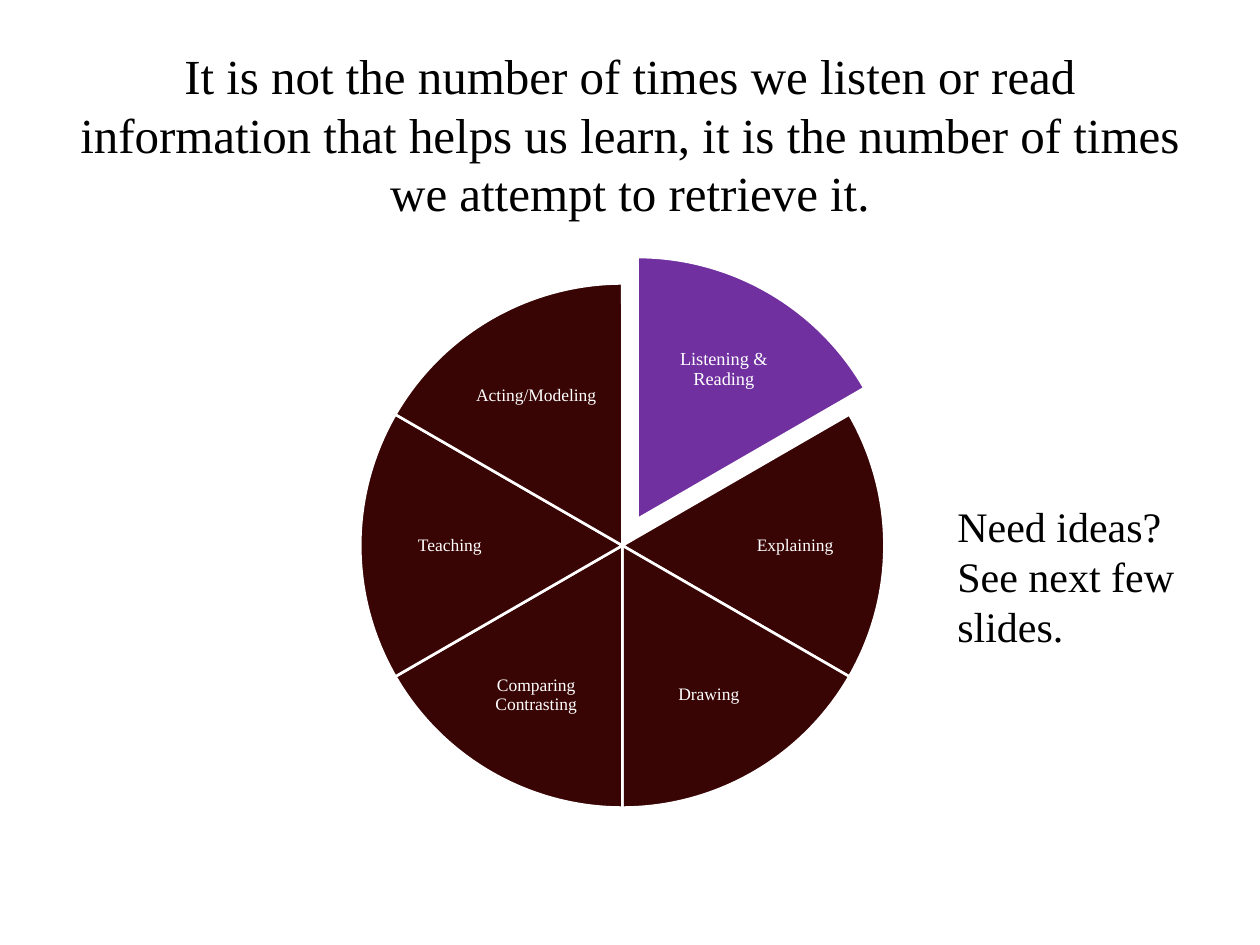
from math import cos, radians, sin

from pptx import Presentation
from pptx.dml.color import RGBColor
from pptx.enum.shapes import MSO_SHAPE
from pptx.enum.text import MSO_ANCHOR, PP_ALIGN
from pptx.util import Inches, Pt

PIE = MSO_SHAPE.PIE
MIDDLE = MSO_ANCHOR.MIDDLE
CENTER, LEFT = PP_ALIGN.CENTER, PP_ALIGN.LEFT

TITLE = ("It is not the number of times we listen or read information that "
         "helps us learn, it is the number of times we attempt to retrieve it.")
# Clockwise from the top; the first activity is pulled out of the pie
ACTIVITIES = ["Listening & Reading", "Explaining", "Drawing",
              "Comparing Contrasting", "Teaching", "Acting/Modeling"]
NOTE = ["Need ideas?", "See next few slides."]

THEME = {
    "font": "Times New Roman",
    "text": RGBColor(0x00, 0x00, 0x00),
    "light": RGBColor(0xFF, 0xFF, 0xFF),
    "wedge": RGBColor(0x38, 0x04, 0x04),
    "highlight": RGBColor(0x70, 0x30, 0xA0),
    "title_size": 28,
    "note_size": 24,
    "label_size": 10,
    "highlight_size": 10.5,
}

# Pie geometry, in inches
CENTER_X, CENTER_Y, RADIUS = 4.94, 4.33, 2.08
PULL_X, PULL_Y = 0.12, -0.21
LABEL_REACH = 1.37
LABEL_WIDTH, LABEL_HEIGHT = 1.21, 0.89
STEP = 360 / len(ACTIVITIES)
ADJUSTMENT_PER_DEGREE = 0.6


def format_text(frame, size, color, align):
    frame.word_wrap = True
    for paragraph in frame.paragraphs:
        paragraph.alignment = align
        for run in paragraph.runs:
            run.font.name = THEME["font"]
            run.font.size = Pt(size)
            run.font.color.rgb = color


def add_wedge(slide, center_x, center_y, start, color):
    wedge = slide.shapes.add_shape(
        PIE, Inches(center_x - RADIUS), Inches(center_y - RADIUS),
        Inches(2 * RADIUS), Inches(2 * RADIUS))
    wedge.adjustments[0] = start % 360 * ADJUSTMENT_PER_DEGREE
    wedge.adjustments[1] = (start + STEP) % 360 * ADJUSTMENT_PER_DEGREE
    wedge.shadow.inherit = False
    wedge.fill.solid()
    wedge.fill.fore_color.rgb = color
    wedge.line.color.rgb = THEME["light"]
    wedge.line.width = Pt(1.5)


def add_label(slide, center_x, center_y, middle, activity, size):
    x = center_x + LABEL_REACH * cos(radians(middle))
    y = center_y + LABEL_REACH * sin(radians(middle))
    label = slide.shapes.add_textbox(
        Inches(x - LABEL_WIDTH / 2), Inches(y - LABEL_HEIGHT / 2),
        Inches(LABEL_WIDTH), Inches(LABEL_HEIGHT))
    frame = label.text_frame
    frame.text = activity
    frame.vertical_anchor = MIDDLE
    frame.margin_left = frame.margin_right = Inches(0.01)
    frame.margin_top = frame.margin_bottom = Inches(0.01)
    frame.paragraphs[0].line_spacing = 0.9
    format_text(frame, size, THEME["light"], CENTER)


def main():
    prs = Presentation()
    prs.slide_width, prs.slide_height = Inches(10), Inches(7.5)
    slide = prs.slides.add_slide(prs.slide_layouts[5])

    # Title, raised within its box by the bottom margin
    title = slide.shapes.title
    title.left, title.top = Inches(0.5), Inches(0.67)
    title.width, title.height = Inches(9), Inches(1.25)
    title.text_frame.text = TITLE
    title.text_frame.vertical_anchor = MIDDLE
    title.text_frame.margin_bottom = Inches(0.52)
    format_text(title.text_frame, THEME["title_size"], THEME["text"], CENTER)

    # Pie of learning activities
    for index, activity in enumerate(ACTIVITIES):
        pulled = index == 0
        center_x = CENTER_X + (PULL_X if pulled else 0)
        center_y = CENTER_Y + (PULL_Y if pulled else 0)
        start = 270 + index * STEP
        add_wedge(slide, center_x, center_y, start,
                  THEME["highlight" if pulled else "wedge"])
        add_label(slide, center_x, center_y, start + STEP / 2, activity,
                  THEME["highlight_size" if pulled else "label_size"])

    # Note beside the pie
    note = slide.shapes.add_textbox(
        Inches(7.5), Inches(3.92), Inches(2.17), Inches(1.31))
    note.text_frame.text = "\n".join(NOTE)
    format_text(note.text_frame, THEME["note_size"], THEME["text"], LEFT)

    prs.save("out.pptx")


if __name__ == "__main__":
    main()
